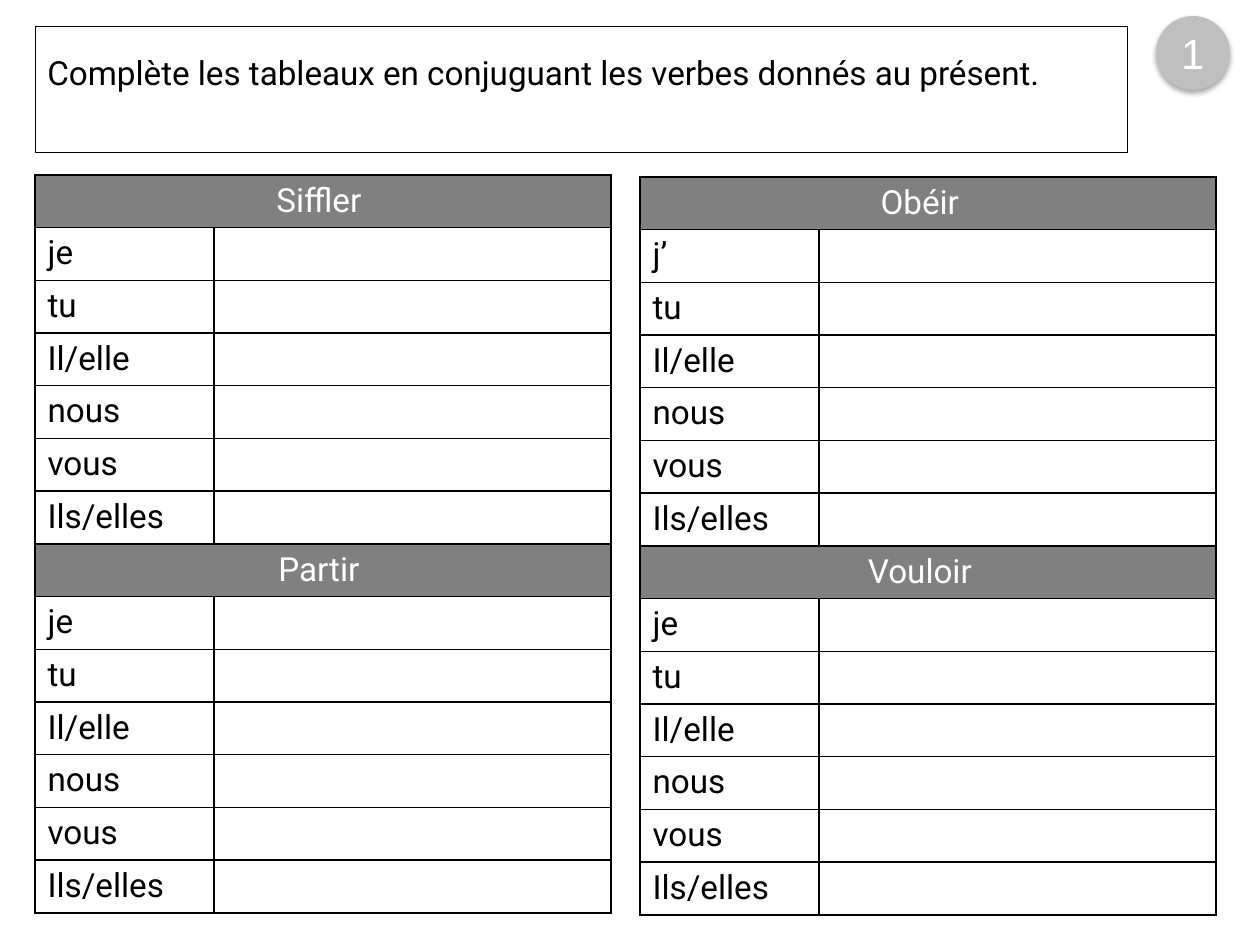
from lxml import etree
from pptx import Presentation
from pptx.dml.color import RGBColor
from pptx.enum.shapes import MSO_SHAPE
from pptx.enum.text import MSO_ANCHOR, PP_ALIGN
from pptx.oxml import parse_xml
from pptx.oxml.ns import nsdecls, qn
from pptx.util import Emu, Pt

RECT, OVAL = MSO_SHAPE.RECTANGLE, MSO_SHAPE.OVAL
TOP, MIDDLE = MSO_ANCHOR.TOP, MSO_ANCHOR.MIDDLE
LEFT, CENTER = PP_ALIGN.LEFT, PP_ALIGN.CENTER

BLACK = RGBColor(0x00, 0x00, 0x00)
WHITE = RGBColor(0xFF, 0xFF, 0xFF)
GREY = RGBColor(0x80, 0x80, 0x80)
SILVER = RGBColor(0xBF, 0xBF, 0xBF)

SCALE = 914400 / 126
PAD = 13
WIDE, HIGH = 576, 369
HEAD = 179
REST = ["tu", "Il/elle", "nous", "vous", "Ils/elles"]
SIDES = ["lnL", "lnR", "lnT", "lnB"]
VERBS = [
    (35, 175, 8, [("Siffler", "je"), ("Partir", "je")]),
    (640, 177, 16, [("Obéir", "j’"), ("Vouloir", "je")]),
]


def px(n):
    return Emu(round(n * SCALE))


def write(frame, text, color, align=LEFT, size=19, font="Roboto"):
    para = frame.paragraphs[0]
    para.alignment = align
    run = para.add_run()
    run.text = text
    run.font.size = Pt(size)
    run.font.name = font
    run.font.color.rgb = color
    return para


def add_form(slide, kind, box, anchor):
    form = slide.shapes.add_shape(kind, *map(px, box))
    form.shadow.inherit = False
    form.text_frame.word_wrap = True
    form.text_frame.vertical_anchor = anchor
    return form


def add_badge(slide, box, text):
    badge = add_form(slide, OVAL, box, MIDDLE)
    badge.fill.solid()
    badge.fill.fore_color.rgb = SILVER
    badge.line.fill.background()
    glow = badge.element.spPr.find(qn("a:effectLst"))
    glow.append(parse_xml(
        f'<a:outerShdw {nsdecls("a")} blurRad="{Pt(3.1)}" dist="{Pt(1.8)}" '
        'dir="5400000" rotWithShape="0"><a:srgbClr val="000000">'
        '<a:alpha val="35000"/></a:srgbClr></a:outerShdw>'))
    write(badge.text_frame, text, WHITE, CENTER, 24, "Arial")


def add_task(slide, box, text):
    task = add_form(slide, RECT, box, TOP)
    task.fill.background()
    task.line.color.rgb = BLACK
    task.line.width = Pt(0.25)
    write(task.text_frame, text, BLACK).line_spacing = 1.5


def paint(cell, color):
    props = cell._tc.get_or_add_tcPr()
    for side in SIDES:
        line = etree.SubElement(props, qn(f"a:{side}"), w=str(Pt(1)))
        fill = etree.SubElement(line, qn("a:solidFill"))
        etree.SubElement(fill, qn("a:srgbClr"), val=str(BLACK))
    cell.fill.solid()
    cell.fill.fore_color.rgb = color


def add_verb(slide, box, verb, first, shift):
    names = [first, *REST]
    count = len(names) + 1
    table = slide.shapes.add_table(count, 2, *map(px, box)).table
    table.columns[0].width = px(HEAD)
    table.columns[1].width = px(box[2] - HEAD)
    for row in table.rows:
        row.height = Emu(px(box[3]) // count)
        for cell in row.cells:
            paint(cell, WHITE)
    title = table.cell(0, 0)
    title.merge(table.cell(0, 1))
    title.fill.fore_color.rgb = GREY
    title.margin_right = px(PAD + shift)
    write(title.text_frame, verb, WHITE, CENTER)
    for i, name in enumerate(names, 1):
        write(table.cell(i, 0).text_frame, name, BLACK)


def main():
    deck = Presentation()
    deck.slide_width, deck.slide_height = px(1260), px(945)
    slide = deck.slides.add_slide(deck.slide_layouts[6])
    add_badge(slide, (1156, 16, 74, 74), "1")
    add_task(slide, (35, 26, 1092, 126),
             "Complète les tableaux en conjuguant les verbes donnés au présent.")
    for left, top, shift, pairs in VERBS:
        for i, (verb, first) in enumerate(pairs):
            box = (left, top + i * HIGH, WIDE, HIGH)
            add_verb(slide, box, verb, first, shift)
    deck.save("out.pptx")


if __name__ == "__main__":
    main()
